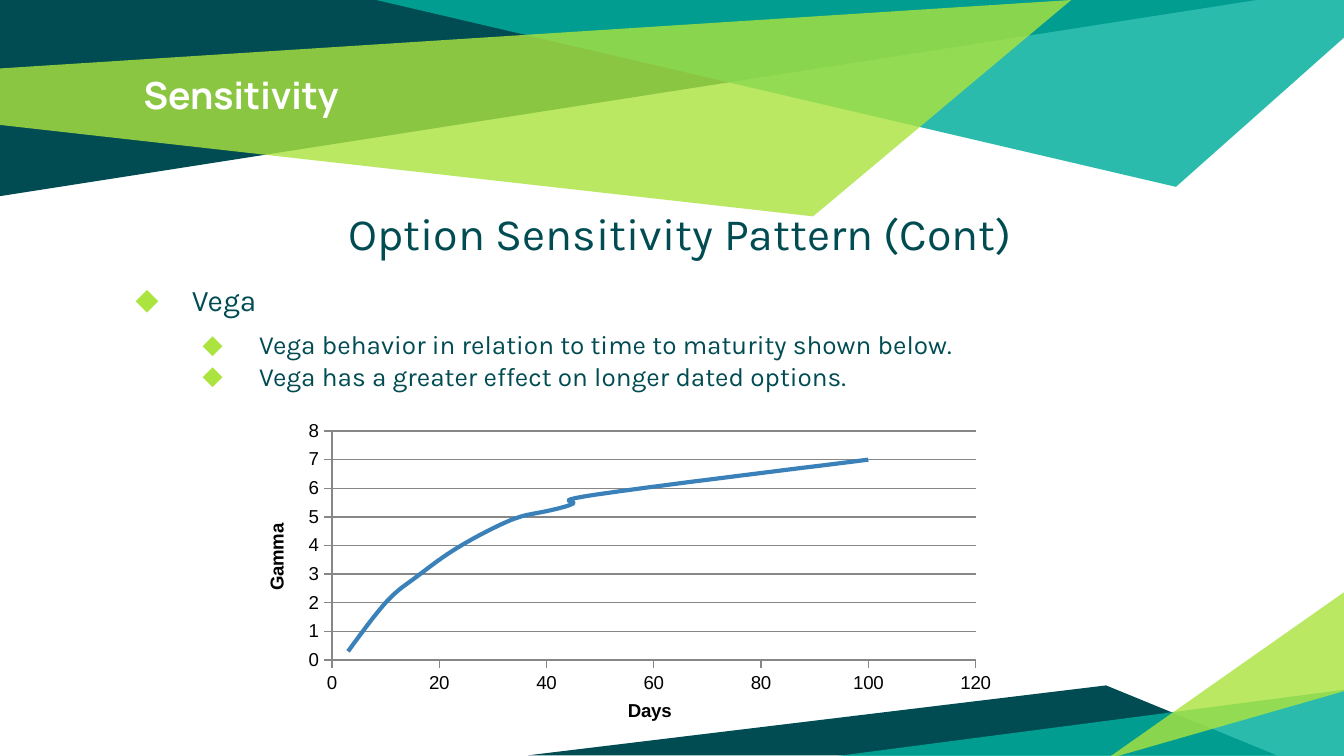
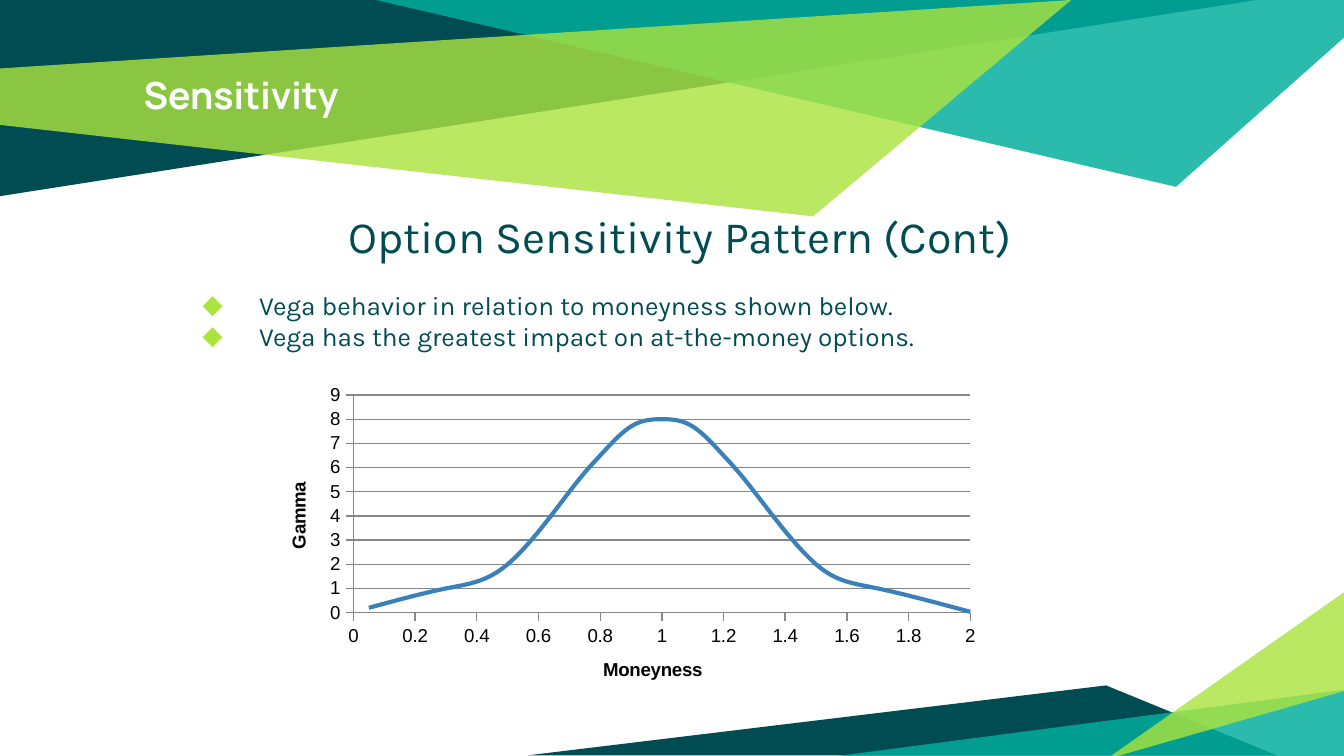
from lxml import etree
from pptx import Presentation
from pptx import util as u
from pptx.chart.data import XyChartData
from pptx.dml.color import RGBColor
from pptx.enum import chart as charts, text
from pptx.oxml.ns import qn

PX = u.Inches(1) // 100  # 100 px to the inch
WIDTH = 1000

NAVY = RGBColor(0x00, 0x4C, 0x52)
TEAL = RGBColor(0x00, 0xAE, 0x9D)
LIME = RGBColor(0xAB, 0xE3, 0x3F)
WHITE = RGBColor(0xFF, 0xFF, 0xFF)
BLACK = RGBColor(0x00, 0x00, 0x00)
GRAY = RGBColor(0x87, 0x87, 0x87)
BLUE = RGBColor(0x3A, 0x81, 0xBA)

# Shared bands: colour, opacity in percent, corners
BANDS = [
    (NAVY, 100, [(0, 0), (0, 146), (935, 0)]),
    (TEAL, 83, [(280, 0), (875, 139), (1000, 28), (1000, 0)]),
    (LIME, 81, [(-1, 51), (0, 93), (605, 161), (797, 0)]),
    (NAVY, 100, [(393, 562), (950, 562), (823, 510)]),
    (TEAL, 83, [(1002, 513), (1002, 565), (604, 565)]),
    (LIME, 81, [(1001, 514), (1001, 440), (823, 565)]),
]

# Paragraph formats; margin and indent in px, spacing in points
HEADING = dict(size=24, margin=8, indent=0, before=6, align=text.PP_ALIGN.CENTER)
TOPIC = dict(size=16, margin=50, indent=-42, before=12, bullet=True)
POINT = dict(size=14, margin=100, indent=-42, before=6, bullet=True)
NEXT_POINT = POINT | dict(before=0)
LOOSE_POINT = POINT | dict(line=1.5)

VEGA_BY_TIME = [(3, 0.3), (10, 2), (15, 2.8), (20, 3.5), (25, 4.1), (30, 4.6),
                (35, 5), (40, 5.2), (45, 5.5), (50, 5.8), (100, 7)]
VEGA_BY_MONEYNESS = [(0.05, 0.2), (0.3, 1), (0.5, 2), (0.7, 5), (0.8, 6.5),
                     (0.9, 7.7), (1, 8), (1.1, 7.7), (1.2, 6.5), (1.3, 5),
                     (1.5, 2), (1.7, 1), (2.01, 0)]

HEADING_TEXT = "Option Sensitivity Pattern (Cont)"
# Plot areas are in px from the corner of their chart
SLIDES = [
    dict(
        body_box=(83, 143, 838, 398),
        body=[(HEADING_TEXT, HEADING),
              ("Vega", TOPIC),
              ("Vega behavior in relation to time to maturity shown below.", POINT),
              ("Vega has a greater effect on longer dated options.", NEXT_POINT)],
        chart=dict(box=(185, 313, 566, 228), points=VEGA_BY_TIME,
                   plot=(62, 7, 479, 171),
                   x_axis=("Days", 120, 20), y_axis=("Gamma", 8, 1)),
    ),
    dict(
        body_box=(83, 145, 838, 396),
        body=[(HEADING_TEXT, HEADING),
              ("Vega behavior in relation to moneyness shown below.", LOOSE_POINT),
              ("Vega has the greatest impact on at-the-money options.", NEXT_POINT)],
        chart=dict(box=(193, 281, 543, 246), points=VEGA_BY_MONEYNESS,
                   plot=(70, 13, 459, 162),
                   x_axis=("Moneyness", 2, 0.2), y_axis=("Gamma", 9, 1)),
    ),
]


def emu(box):
    return [length * PX for length in box]


def set_font(font, **values):
    font.color.rgb = values.pop("color")
    for name, value in values.items():
        setattr(font, name, value)


def add_band(slide, color, opacity, corners):
    outline = slide.shapes.build_freeform(*corners[0], scale=PX)
    outline.add_line_segments(corners[1:], close=True)
    band = outline.convert_to_shape()
    band.shadow.inherit = False
    band.line.fill.background()
    band.fill.solid()
    band.fill.fore_color.rgb = color
    if opacity < 100:
        tint = band.fill._xPr.find(f"{qn('a:solidFill')}/{qn('a:srgbClr')}")
        etree.SubElement(tint, qn("a:alpha"), val=str(opacity * 1000))


def add_text(slide, box):
    frame = slide.shapes.add_textbox(*emu(box)).text_frame
    settings = dict(word_wrap=True, auto_size=text.MSO_AUTO_SIZE.NONE,
                    vertical_anchor=text.MSO_ANCHOR.TOP)
    settings |= {f"margin_{side}": 10 * PX
                 for side in ("left", "top", "right", "bottom")}
    for name, value in settings.items():
        setattr(frame, name, value)
    return frame


def add_title(slide, wording):
    run = add_text(slide, (97, 44, 806, 64)).paragraphs[0].add_run()
    run.text = wording
    set_font(run.font, name="Manrope", size=u.Pt(20), bold=True, color=WHITE)


def add_body(slide, box, lines):
    frame = add_text(slide, box)
    for number, (wording, style) in enumerate(lines):
        line = frame.add_paragraph() if number else frame.paragraphs[0]
        line.alignment = style.get("align", text.PP_ALIGN.LEFT)
        line.space_before = u.Pt(style["before"])
        line.line_spacing = style.get("line", 1.0)
        run = line.add_run()
        run.text = wording
        set_font(run.font, name="Karla", size=u.Pt(style["size"]), color=NAVY)
        # Indents and bullet
        layout = line._p.get_or_add_pPr()
        layout.set("marL", str(style["margin"] * PX))
        layout.set("indent", str(style["indent"] * PX))
        if style.get("bullet"):
            tint = etree.SubElement(layout, qn("a:buClr"))
            etree.SubElement(tint, qn("a:srgbClr"), val=str(LIME))
            etree.SubElement(layout, qn("a:buFont"), typeface="Karla")
            etree.SubElement(layout, qn("a:buChar"), char="◆")


def format_axis(axis, caption, maximum, step, grid):
    settings = dict(minimum_scale=0, maximum_scale=maximum, major_unit=step,
                    has_major_gridlines=grid, has_minor_gridlines=False,
                    major_tick_mark=charts.XL_TICK_MARK.OUTSIDE,
                    minor_tick_mark=charts.XL_TICK_MARK.NONE)
    for name, value in settings.items():
        setattr(axis, name, value)
    axis.tick_labels.number_format = "General"
    axis.tick_labels.number_format_is_linked = False
    rules = [axis.format.line]
    if grid:
        rules.append(axis.major_gridlines.format.line)
    for rule in rules:
        rule.color.rgb = GRAY
        rule.width = u.Pt(0.75)
    label = axis.axis_title.text_frame.paragraphs[0].add_run()
    label.text = caption
    set_font(label.font, name="Arial", size=u.Pt(10), bold=True, color=BLACK)


def place_plot(chart, box, plot):
    area = chart._chartSpace.chart.plotArea
    for automatic in area.findall(qn("c:layout")):
        area.remove(automatic)
    layout = etree.Element(qn("c:layout"))
    area.insert(0, layout)
    manual = etree.SubElement(layout, qn("c:manualLayout"))
    width, height = box[2:]
    shares = [part / whole for part, whole in zip(plot, (width, height) * 2)]
    entries = [("layoutTarget", "inner"), ("xMode", "edge"), ("yMode", "edge")]
    for tag, value in entries + list(zip("xywh", shares)):
        etree.SubElement(manual, qn(f"c:{tag}"), val=str(value))


def add_curve(slide, box, points, plot, x_axis, y_axis):
    data = XyChartData()
    vega = data.add_series("Series 1")
    for x, y in points:
        vega.add_data_point(x, y)
    chart = slide.shapes.add_chart(
        charts.XL_CHART_TYPE.XY_SCATTER_SMOOTH_NO_MARKERS, *emu(box), data).chart
    chart.has_title = False
    chart.has_legend = False
    set_font(chart.font, name="Arial", size=u.Pt(10), color=BLACK)
    chart.plots[0].vary_by_categories = False
    curve = chart.plots[0].series[0]
    curve.marker.style = charts.XL_MARKER_STYLE.NONE
    curve.format.line.color.rgb = BLUE
    curve.format.line.width = u.Pt(2.25)
    # Scatter series have no public smooth property
    for smooth in curve._element.findall(qn("c:smooth")):
        smooth.set("val", "1")
    format_axis(chart.category_axis, *x_axis, grid=False)
    format_axis(chart.value_axis, *y_axis, grid=True)
    place_plot(chart, box, plot)


def main():
    deck = Presentation()
    deck.slide_width = WIDTH * PX
    deck.slide_height = deck.slide_width * 9 // 16
    for content in SLIDES:
        slide = deck.slides.add_slide(deck.slide_layouts[6])
        for band in BANDS:
            add_band(slide, *band)
        add_title(slide, "Sensitivity")
        add_body(slide, content["body_box"], content["body"])
        add_curve(slide, **content["chart"])
    deck.save("out.pptx")


if __name__ == "__main__":
    main()
